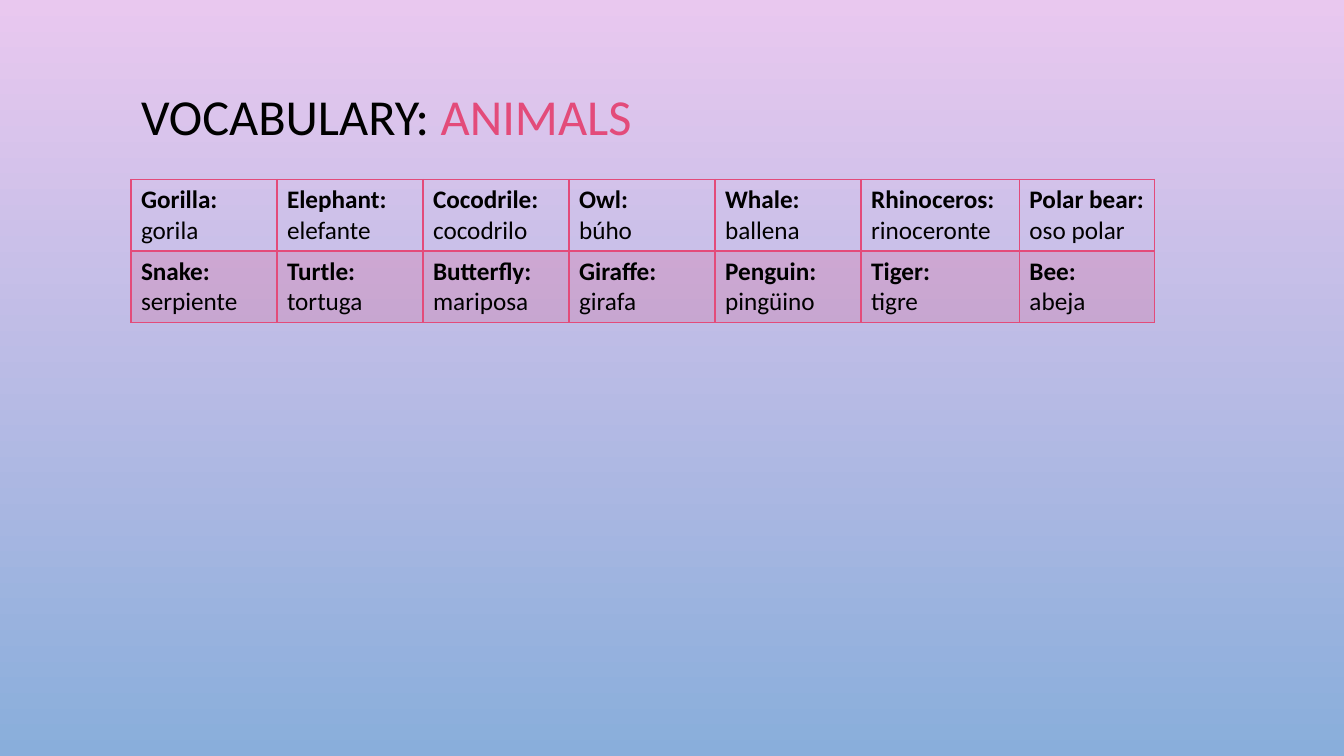
from lxml import etree
from pptx import Presentation
from pptx.dml.color import RGBColor
from pptx.enum.text import MSO_ANCHOR, PP_ALIGN
from pptx.oxml.ns import qn
from pptx.util import Cm, Pt

LEFT = PP_ALIGN.LEFT
MIDDLE = MSO_ANCHOR.MIDDLE
BLACK = RGBColor(0x00, 0x00, 0x00)
ROSE = RGBColor(0xE3, 0x4B, 0x7A)
PINK = RGBColor(0xE9, 0xC8, 0xEF)
BLUE = RGBColor(0x89, 0xAE, 0xDB)
FONT = "Calibri"

ANIMALS = [
    [("Gorilla:", "gorila"), ("Elephant:", "elefante"), ("Cocodrile:", "cocodrilo"),
     ("Owl:", "búho"), ("Whale:", "ballena"), ("Rhinoceros:", "rinoceronte"),
     ("Polar bear:", "oso polar")],
    [("Snake:", "serpiente"), ("Turtle:", "tortuga"), ("Butterfly:", "mariposa"),
     ("Giraffe:", "girafa"), ("Penguin:", "pingüino"), ("Tiger:", "tigre"),
     ("Bee:", "abeja")],
]
COLUMN_WIDTHS = [3.68] * 5 + [3.99, 3.4]
ROW_HEIGHT = 1.78


def add_run(paragraph, text, size, color, bold=False):
    run = paragraph.add_run()
    run.text = text
    run.font.name = FONT
    run.font.size = Pt(size)
    run.font.bold = bold
    run.font.color.rgb = color


def set_borders(cell, widths):
    properties = cell._tc.get_or_add_tcPr()
    for index, (side, width) in enumerate(zip("LRTB", widths)):
        line = etree.Element(qn(f"a:ln{side}"), w=str(Pt(width)))
        fill = etree.SubElement(line, qn("a:solidFill"))
        etree.SubElement(fill, qn("a:srgbClr"), val=str(ROSE))
        properties.insert(index, line)


presentation = Presentation()
presentation.slide_width = Cm(33.87)
presentation.slide_height = Cm(19.05)
slide = presentation.slides.add_slide(presentation.slide_layouts[5])

# Background gradient, top to bottom
background = slide.background.fill
background.gradient()
background.gradient_angle = 270
for stop, color, position in zip(background.gradient_stops, (PINK, BLUE), (0, 1)):
    stop.color.rgb = color
    stop.position = position

# Title
title = slide.shapes.title
title.left, title.top, title.width, title.height = Cm(3.3), Cm(2.06), Cm(28.85), Cm(1.88)
title.text_frame.vertical_anchor = MIDDLE
heading = title.text_frame.paragraphs[0]
heading.alignment = LEFT
heading.line_spacing = 0.9
add_run(heading, "VOCABULARY: ", 36, BLACK)
add_run(heading, "ANIMALS", 36, ROSE)

# Vocabulary table
table = slide.shapes.add_table(
    len(ANIMALS), len(COLUMN_WIDTHS), Cm(3.3), Cm(4.52),
    Cm(sum(COLUMN_WIDTHS)), Cm(ROW_HEIGHT * len(ANIMALS))).table
table.first_row = False
table.horz_banding = False
for column, width in zip(table.columns, COLUMN_WIDTHS):
    column.width = Cm(width)

for row_index, words in enumerate(ANIMALS):
    table.rows[row_index].height = Cm(ROW_HEIGHT)
    for column_index, (english, spanish) in enumerate(words):
        cell = table.cell(row_index, column_index)
        add_run(cell.text_frame.paragraphs[0], english, 18, BLACK, bold=True)
        add_run(cell.text_frame.add_paragraph(), spanish, 18, BLACK)
        if row_index == 0:
            cell.fill.background()
            set_borders(cell, (1, 1, 1, 2))
        else:
            cell.fill.solid()
            cell.fill.fore_color.rgb = ROSE
            tint = cell._tc.tcPr.find(qn("a:solidFill")).find(qn("a:srgbClr"))
            etree.SubElement(tint, qn("a:alpha"), val="20000")
            set_borders(cell, (1, 1, 1, 1))

presentation.save("out.pptx")
